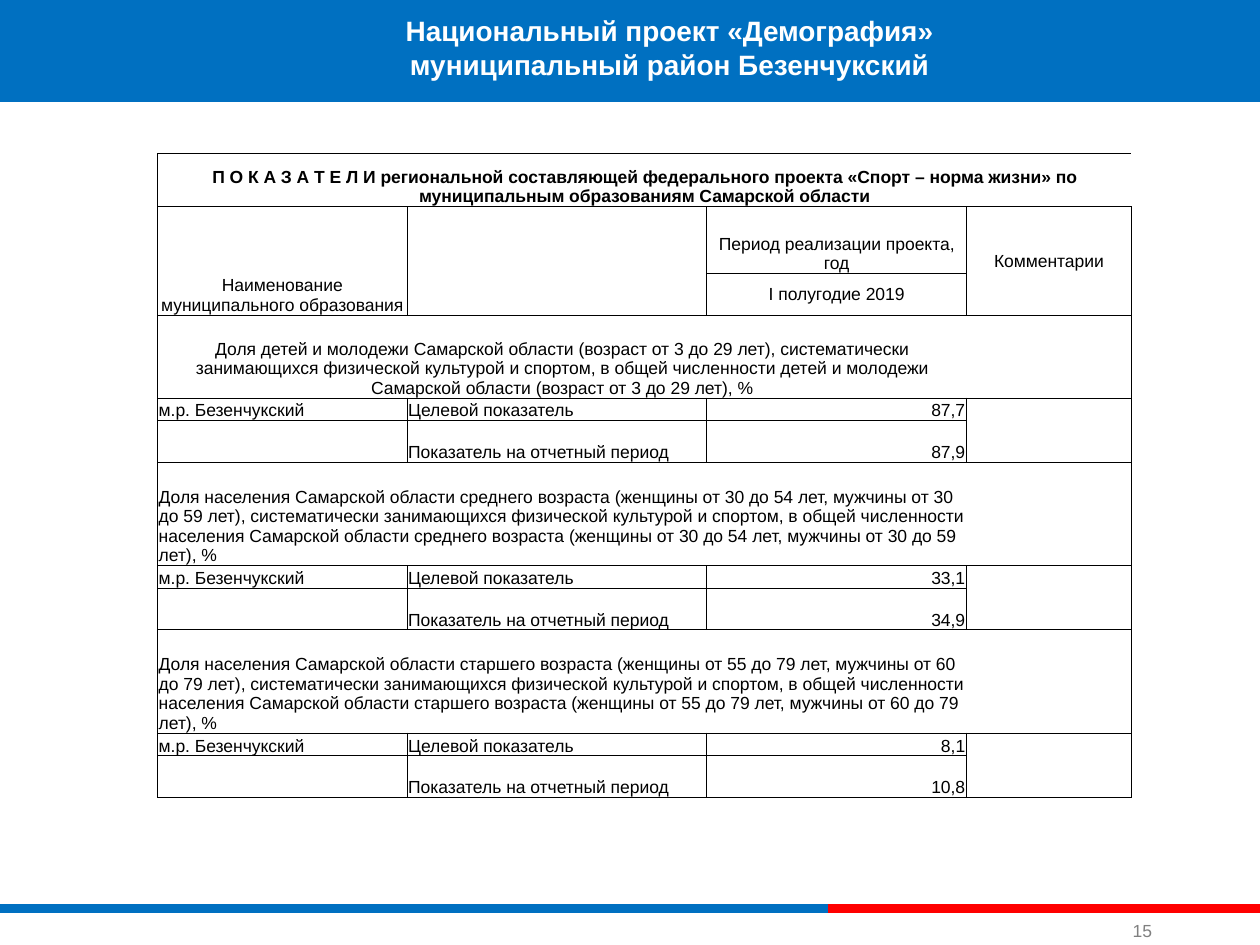
import dataclasses

import pptx
import pptx.dml.color
import pptx.enum.shapes
import pptx.enum.text
import pptx.oxml.ns
import pptx.util
from lxml import etree
from pptx.util import Inches

ALIGN = pptx.enum.text.PP_ALIGN
ANCHOR = pptx.enum.text.MSO_ANCHOR
qn = pptx.oxml.ns.qn


@dataclasses.dataclass(frozen=True)
class Theme:
    font: str = "Arial"
    blue: str = "0070C1"
    red: str = "FF0000"
    white: str = "FFFFFF"
    black: str = "000000"
    gray: str = "808080"
    title_size: float = 16
    body_size: float = 10
    stripe_width: float = 5
    border_width: float = 0.5


THEME = Theme()


def rgb(value):
    return pptx.dml.color.RGBColor.from_string(value)


def style_paragraph(para, size, color, bold=False, align=ALIGN.LEFT):
    para.alignment = align
    para.font.name = THEME.font
    para.font.size = pptx.util.Pt(size)
    para.font.bold = bold
    para.font.color.rgb = rgb(color)


def add_text(page, box, lines, size, color, bold=False, align=ALIGN.LEFT,
             anchor=ANCHOR.TOP):
    frame = page.shapes.add_textbox(*box).text_frame
    frame.word_wrap = True
    frame.vertical_anchor = anchor
    frame.margin_left = frame.margin_right = Inches(0.05)
    frame.margin_top = frame.margin_bottom = Inches(0.05)
    for index, line in enumerate(lines):
        para = frame.add_paragraph() if index else frame.paragraphs[0]
        para.text = line
        style_paragraph(para, size, color, bold, align)


# Title band
def add_header(page, left, top, width, height):
    band = page.shapes.add_shape(
        pptx.enum.shapes.MSO_SHAPE.RECTANGLE, left, top, width, height)
    band.shadow.inherit = False
    band.fill.solid()
    band.fill.fore_color.rgb = rgb(THEME.blue)
    band.line.fill.background()
    title_box = (left + Inches(0.75), top + Inches(0.09), Inches(9.13), Inches(0.64))
    add_text(page, title_box,
             ["Национальный проект «Демография»", "муниципальный район Безенчукский"],
             THEME.title_size, THEME.white, bold=True, align=ALIGN.CENTER)


# Two-colour stripe and page number
def add_footer(page, left, top, width, height):
    split = left + Inches(6.57)
    for start, end, color in ((left, split, THEME.blue),
                              (split, left + width, THEME.red)):
        stripe = page.shapes.add_connector(
            pptx.enum.shapes.MSO_CONNECTOR.STRAIGHT, start, top, end, top)
        stripe.line.color.rgb = rgb(color)
        stripe.line.width = pptx.util.Pt(THEME.stripe_width)
        etree.SubElement(stripe._element.spPr, qn("a:effectLst"))
    number_box = (left + Inches(8.94), top + Inches(0.06), Inches(0.4), Inches(0.25))
    add_text(page, number_box, ["15"], THEME.body_size, THEME.gray,
             anchor=ANCHOR.BOTTOM)


# Indicator table
COLUMNS = (1.98, 2.38, 2.06, 1.31)
HEADER_ROWS = (0.42, 0.53, 0.33)
GROUP_ROWS = ((0.66, 0.18, 0.33), (0.82, 0.18, 0.33), (0.82, 0.18, 0.33))
TABLE_TITLE = ("П О К А З А Т Е Л И региональной составляющей федерального проекта "
               "«Спорт – норма жизни» по муниципальным образованиям Самарской области")
GROUPS = (
    ("Доля детей и молодежи Самарской области (возраст от 3 до 29 лет), "
     "систематически занимающихся физической культурой и спортом, в общей "
     "численности детей и молодежи Самарской области (возраст от 3 до 29 лет), %",
     ALIGN.CENTER, "87,7", "87,9"),
    ("Доля населения Самарской области среднего возраста (женщины от 30 до 54 лет, "
     "мужчины от 30 до 59 лет), систематически занимающихся физической культурой и "
     "спортом, в общей численности населения Самарской области среднего возраста "
     "(женщины от 30 до 54 лет, мужчины от 30 до 59 лет), %",
     ALIGN.LEFT, "33,1", "34,9"),
    ("Доля населения Самарской области старшего возраста (женщины от 55 до 79 лет, "
     "мужчины от 60 до 79 лет), систематически занимающихся физической культурой и "
     "спортом, в общей численности населения Самарской области старшего возраста "
     "(женщины от 55 до 79 лет, мужчины от 60 до 79 лет), %",
     ALIGN.LEFT, "8,1", "10,8"),
)


def set_borders(cell, sides):
    properties = cell._tc.get_or_add_tcPr()
    for index, side in enumerate("LRTB"):
        line = etree.Element(qn(f"a:ln{side}"))
        if side in sides:
            line.set("w", str(pptx.util.Pt(THEME.border_width)))
            fill = etree.SubElement(line, qn("a:solidFill"))
            etree.SubElement(fill, qn("a:srgbClr"), val=THEME.black)
        else:
            line.set("w", "0")
            etree.SubElement(line, qn("a:noFill"))
        properties.insert(index, line)


def prepare_cell(cell, sides):
    cell.fill.background()
    cell.margin_left = cell.margin_right = cell.margin_top = Inches(0.01)
    cell.margin_bottom = 0
    cell.vertical_anchor = ANCHOR.BOTTOM
    set_borders(cell, sides)


def fill_cell(cell, text, align=ALIGN.LEFT, bold=False, anchor=ANCHOR.BOTTOM):
    para = cell.text_frame.paragraphs[0]
    para.text = text
    style_paragraph(para, THEME.body_size, THEME.black, bold, align)
    cell.vertical_anchor = anchor


def add_indicators(page, left, top, width, height):
    heights = HEADER_ROWS + sum(GROUP_ROWS, ())
    table = page.shapes.add_table(
        len(heights), len(COLUMNS), left, top, width, height).table
    table.first_row = table.horz_banding = False
    for column, size in zip(table.columns, COLUMNS):
        column.width = Inches(size)
    for row, size in zip(table.rows, heights):
        row.height = Inches(size)

    # Wide rows have no inner vertical borders; the title is open at the right
    last = len(COLUMNS) - 1
    for r in range(len(heights)):
        for c in range(len(COLUMNS)):
            sides = "LRTB"
            if r % 3 == 0:
                sides = "TB" + ("L" if c == 0 else "") + ("R" if c == last and r else "")
            prepare_cell(table.cell(r, c), sides)

    def merge(first_row, first_column, last_row, last_column):
        table.cell(first_row, first_column).merge(table.cell(last_row, last_column))

    merge(0, 0, 0, last)
    for c in (0, 1, last):
        merge(1, c, 2, c)
    fill_cell(table.cell(0, 0), TABLE_TITLE, ALIGN.CENTER, bold=True)
    fill_cell(table.cell(1, 0), "Наименование муниципального образования", ALIGN.CENTER)
    fill_cell(table.cell(1, 2), "Период реализации проекта, год", ALIGN.CENTER)
    fill_cell(table.cell(1, last), "Комментарии", ALIGN.CENTER, anchor=ANCHOR.MIDDLE)
    fill_cell(table.cell(2, 2), "I полугодие 2019", ALIGN.CENTER, anchor=ANCHOR.MIDDLE)

    for index, (heading, align, target, actual) in enumerate(GROUPS, start=1):
        r = 3 * index
        merge(r, 0, r, 2)
        merge(r + 1, last, r + 2, last)
        fill_cell(table.cell(r, 0), heading, align)
        fill_cell(table.cell(r + 1, 0), "м.р. Безенчукский")
        fill_cell(table.cell(r + 1, 1), "Целевой показатель")
        fill_cell(table.cell(r + 1, 2), target, ALIGN.RIGHT)
        fill_cell(table.cell(r + 2, 1), "Показатель на отчетный период")
        fill_cell(table.cell(r + 2, 2), actual, ALIGN.RIGHT)

    # Small type in empty cells keeps the short rows short
    for cell in table.iter_cells():
        if not cell.text:
            para = cell.text_frame.paragraphs[0]
            etree.SubElement(para._p, qn("a:endParaRPr"), sz=str(int(THEME.body_size * 100)))


def main():
    deck = pptx.Presentation()
    deck.slide_width, deck.slide_height = Inches(10), Inches(7.5)
    page = deck.slides.add_slide(deck.slide_layouts[6])
    add_footer(page, 0, Inches(7.21), deck.slide_width, Inches(0.29))
    add_header(page, 0, Inches(-0.03), deck.slide_width, Inches(0.84))
    add_indicators(page, Inches(1.25), Inches(1.22), Inches(7.73), Inches(5.11))
    deck.save("out.pptx")


if __name__ == "__main__":
    main()
